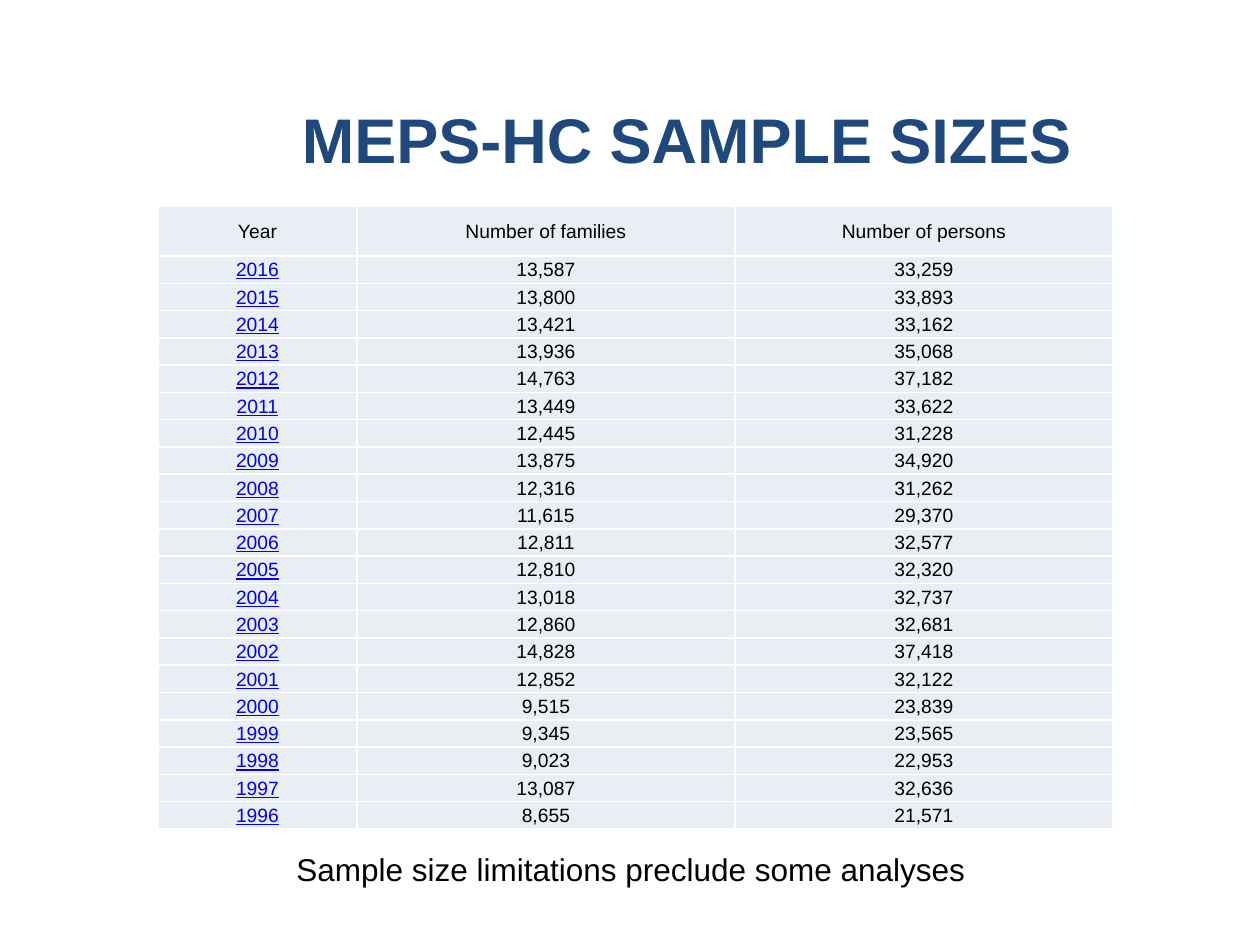
from typing import NamedTuple

from lxml import etree
from pptx import Presentation
from pptx import util as u
from pptx.dml.color import RGBColor
from pptx.enum import text
from pptx.oxml import ns

PX = u.Inches(1) // 126
FONT = "Arial"
BLACK, NAVY, LINK, PALE, WHITE = "000000", "1F497D", "0000FF", "E9EDF4", "FFFFFF"
HEADER_H, BODY_H = 50, 574
COL_WIDTHS = (199, 378, 378)
HEADINGS = ("Year", "Number of families", "Number of persons")


class Sample(NamedTuple):
    year: str
    families: str
    persons: str


class Style(NamedTuple):
    size: int
    color: str = BLACK
    bold: bool = False
    underline: bool = False


SAMPLES = [
    Sample("2016", "13,587", "33,259"),
    Sample("2015", "13,800", "33,893"),
    Sample("2014", "13,421", "33,162"),
    Sample("2013", "13,936", "35,068"),
    Sample("2012", "14,763", "37,182"),
    Sample("2011", "13,449", "33,622"),
    Sample("2010", "12,445", "31,228"),
    Sample("2009", "13,875", "34,920"),
    Sample("2008", "12,316", "31,262"),
    Sample("2007", "11,615", "29,370"),
    Sample("2006", "12,811", "32,577"),
    Sample("2005", "12,810", "32,320"),
    Sample("2004", "13,018", "32,737"),
    Sample("2003", "12,860", "32,681"),
    Sample("2002", "14,828", "37,418"),
    Sample("2001", "12,852", "32,122"),
    Sample("2000", "9,515", "23,839"),
    Sample("1999", "9,345", "23,565"),
    Sample("1998", "9,023", "22,953"),
    Sample("1997", "13,087", "32,636"),
    Sample("1996", "8,655", "21,571"),
]


def px(n: int) -> int:
    return n * PX


def rgb(color: str) -> RGBColor:
    return RGBColor.from_string(color)


def write(tf, words: str, style: Style, align) -> None:
    p = tf.paragraphs[0]
    p.alignment = align
    r = p.add_run()
    r.text = words
    r.font.name = FONT
    r.font.size = u.Pt(style.size)
    r.font.bold = style.bold
    r.font.underline = style.underline
    r.font.color.rgb = rgb(style.color)


def add_text(s, box: tuple[int, int, int, int], words: str, style: Style, align, anchor) -> None:
    tf = s.shapes.add_textbox(*map(px, box)).text_frame
    tf.word_wrap = True
    tf.vertical_anchor = anchor
    write(tf, words, style, align)


def add_borders(cell, color: str) -> None:
    tc_pr = cell._tc.get_or_add_tcPr()
    for side in ("lnL", "lnR", "lnT", "lnB"):
        ln = etree.SubElement(tc_pr, ns.qn(f"a:{side}"), w=str(u.Pt(1)))
        fill = etree.SubElement(ln, ns.qn("a:solidFill"))
        etree.SubElement(fill, ns.qn("a:srgbClr"), val=color)


def fill_cell(cell, words: str, style: Style) -> None:
    cell.margin_left = cell.margin_right = cell.margin_top = px(1)
    cell.margin_bottom = 0
    cell.vertical_anchor = text.MSO_ANCHOR.MIDDLE
    add_borders(cell, WHITE)
    cell.fill.solid()
    cell.fill.fore_color.rgb = rgb(PALE)
    write(cell.text_frame, words, style, text.PP_ALIGN.CENTER)


def add_samples(s, left: int, top: int) -> None:
    rows = [HEADINGS, *SAMPLES]
    frame = s.shapes.add_table(
        len(rows), len(HEADINGS), px(left), px(top), px(sum(COL_WIDTHS)), px(HEADER_H + BODY_H)
    )
    table = frame.table
    for column, width in zip(table.columns, COL_WIDTHS):
        column.width = px(width)
    for i, values in enumerate(rows):
        table.rows[i].height = px(BODY_H) // len(SAMPLES) if i else px(HEADER_H)
        for j, words in enumerate(values):
            is_link = i > 0 and j == 0
            style = Style(11, LINK, underline=True) if is_link else Style(11)
            fill_cell(table.cell(i, j), words, style)


def main() -> None:
    prs = Presentation()
    prs.slide_width, prs.slide_height = px(1260), px(945)
    s = prs.slides.add_slide(prs.slide_layouts[6])
    add_text(s, (230, 95, 914, 86), "MEPS-HC SAMPLE SIZES", Style(36, NAVY, bold=True),
             text.PP_ALIGN.CENTER, text.MSO_ANCHOR.MIDDLE)
    add_samples(s, 158, 206)
    add_text(s, (284, 844, 819, 50), "Sample size limitations preclude some analyses", Style(18),
             text.PP_ALIGN.LEFT, text.MSO_ANCHOR.TOP)
    prs.save("out.pptx")


if __name__ == "__main__":
    main()
